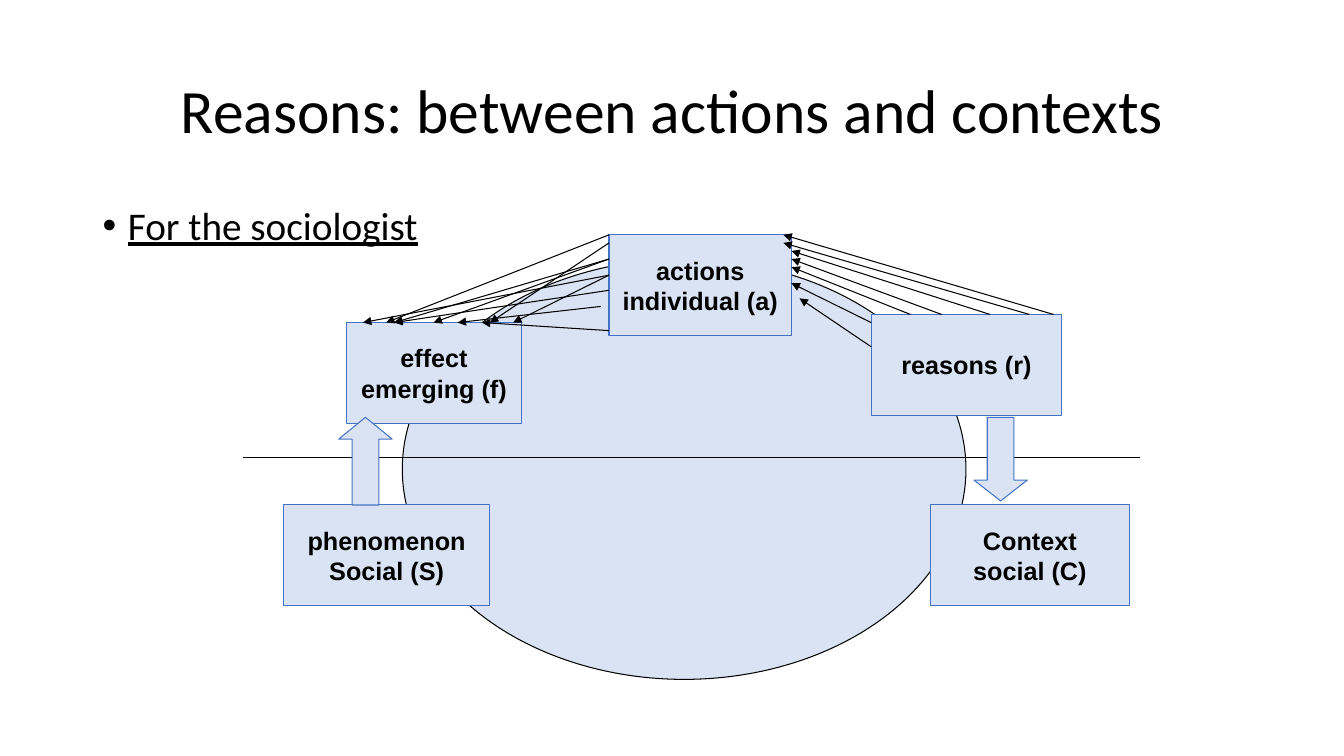
from lxml import etree
from pptx import Presentation
from pptx.dml.color import RGBColor
from pptx.enum.shapes import MSO_CONNECTOR, MSO_SHAPE
from pptx.enum.text import MSO_ANCHOR, PP_ALIGN
from pptx.oxml.ns import qn
from pptx.util import Inches, Pt

BLACK = RGBColor(0x00, 0x00, 0x00)
PALE = RGBColor(0xDA, 0xE3, 0xF3)
BLUE = RGBColor(0x44, 0x72, 0xC4)
LINE = MSO_CONNECTOR.STRAIGHT
RECT, OVAL = MSO_SHAPE.RECTANGLE, MSO_SHAPE.OVAL
UP, DOWN = MSO_SHAPE.UP_ARROW, MSO_SHAPE.DOWN_ARROW
TOP, MIDDLE = MSO_ANCHOR.TOP, MSO_ANCHOR.MIDDLE
LEFT, CENTER = PP_ALIGN.LEFT, PP_ALIGN.CENTER

NODES = {
    "effect": (1.03, 0.87, 1.73, "effect\nemerging (f)"),
    "phenomenon": (0.4, 2.68, 2.05, "phenomenon\nSocial (S)"),
    "actions": (3.63, 0, 1.81, "actions\nindividual (a)"),
    "reasons": (6.23, 0.79, 1.89, "reasons (r)"),
    "context": (6.82, 2.68, 1.97, "Context\nsocial (C)"),
}
CAUSES = [
    (0, 0.32, 0.08, 0.63), (0, 0.08, 0, 0.48), (0.39, 0, 0, 0.32),
    (0.7, 0, 0, 0.24), (1.18, 0, 0, 0.16), (1.57, 0, -0.08, 0.08),
    (1.81, 0, -0.08, 0),
]
RESULTS = [
    (0, 0.08, 1.42), (0, 0.55, 0.47), (0, 0.4, 0.16),
    (0, 0.95, 1.34), (-0.08, 0.71, 1.1), (0, 0.24, 0.47),
    (0, 0.4, 1.65), (0, 0, 0.39), (0, 0.24, 0.86),
]


def write(frame, text, size=18, font="Arial", bold=False, under=False,
          align=CENTER, anchor=MIDDLE, wrap=True, spacing=None):
    """Fill a text frame with one formatted paragraph per line."""
    frame.word_wrap = wrap
    frame.vertical_anchor = anchor
    for i, words in enumerate(text.split("\n")):
        para = frame.paragraphs[0] if i == 0 else frame.add_paragraph()
        para.alignment = align
        if spacing:
            para.line_spacing = spacing
        run = para.add_run()
        run.text = words
        run.font.size, run.font.name = Pt(size), font
        run.font.bold, run.font.underline = bold, under
        run.font.color.rgb = BLACK


def add_form(slide, kind, x, y, w, h, edge=BLUE):
    """Add a pale preset shape with a thin edge."""
    form = slide.shapes.add_shape(kind, Inches(x), Inches(y), Inches(w), Inches(h))
    form.shadow.inherit = False
    form.fill.solid()
    form.fill.fore_color.rgb = PALE
    form.line.color.rgb = edge
    form.line.width = Pt(0.75)
    return form


def add_line(slide, x1, y1, x2, y2, arrow=False):
    """Add a thin black line, with an arrowhead at its end if asked."""
    line = slide.shapes.add_connector(
        LINE, Inches(x1), Inches(y1), Inches(x2), Inches(y2))
    line.line.color.rgb = BLACK
    line.line.width = Pt(0.75)
    props = line.line._get_or_add_ln()
    if arrow:
        etree.SubElement(props, qn("a:tailEnd"), type="triangle")
    etree.SubElement(props.getparent(), qn("a:effectLst"))


def add_title(slide, x, y, w, h):
    """Place the slide title in its box."""
    box = slide.shapes.add_textbox(Inches(x), Inches(y), Inches(w), Inches(h))
    write(box.text_frame, "Reasons: between actions and contexts",
          size=44, font="Calibri", spacing=0.9)


def add_body(slide, x, y, w, h):
    """Place the bulleted line in its box."""
    box = slide.shapes.add_textbox(Inches(x), Inches(y), Inches(w), Inches(h))
    write(box.text_frame, "For the sociologist", size=28, font="Calibri",
          under=True, align=LEFT, anchor=TOP, spacing=0.9)
    para = box.text_frame.paragraphs[0]
    para.space_before = Pt(10)
    props = para._p.get_or_add_pPr()
    props.set("marL", str(Inches(0.25)))
    props.set("indent", str(Inches(-0.25)))
    etree.SubElement(props, qn("a:buFont"), typeface="Arial")
    etree.SubElement(props, qn("a:buChar"), char="•")


def add_cycle(slide, x, y, w):
    """Draw the cycle of boxes and arrows from the given corner and width."""
    add_form(slide, OVAL, x + 1.58, y + 0.24, 5.59, 4.17, edge=BLACK)
    add_line(slide, x, y + 2.21, x + w, y + 2.21)
    for left, top, wide, text in NODES.values():
        node = add_form(slide, RECT, x + left, y + top, wide, 1)
        write(node.text_frame, text, bold=True, wrap=False)
    for kind, left, high, head in ((UP, 0.95, 0.87, 0.408), (DOWN, 7.25, 0.83, 0.391)):
        arrow = add_form(slide, kind, x + left, y + 1.81, 0.53, high)
        arrow.adjustments[0] = 0.5
        arrow.adjustments[1] = head * high / 0.53 if head > 1 else head
    add_rays(slide, x, y)


def add_rays(slide, x, y):
    """Draw the arrows from reasons to actions and from actions to effect."""
    ax, ay, wide, _ = NODES["actions"]
    rx, ry, _, _ = NODES["reasons"]
    ex, ey, _, _ = NODES["effect"]
    for x1, y1, x2, y2 in CAUSES:
        add_line(slide, x + rx + x1, y + ry + y1,
                 x + ax + wide + x2, y + ay + y2, arrow=True)
    for x1, y1, x2 in RESULTS:
        add_line(slide, x + ax + x1, y + ay + y1, x + ex + x2, y + ey, arrow=True)


def main():
    """Build the slide and save it."""
    deck = Presentation()
    deck.slide_width, deck.slide_height = Inches(13.33), Inches(7.5)
    slide = deck.slides.add_slide(deck.slide_layouts[6])
    add_title(slide, 0.92, 0.4, 11.5, 1.45)
    add_body(slide, 0.92, 2, 11.5, 4.76)
    add_cycle(slide, 2.41, 2.33, 8.9)
    deck.save("out.pptx")


if __name__ == "__main__":
    main()
